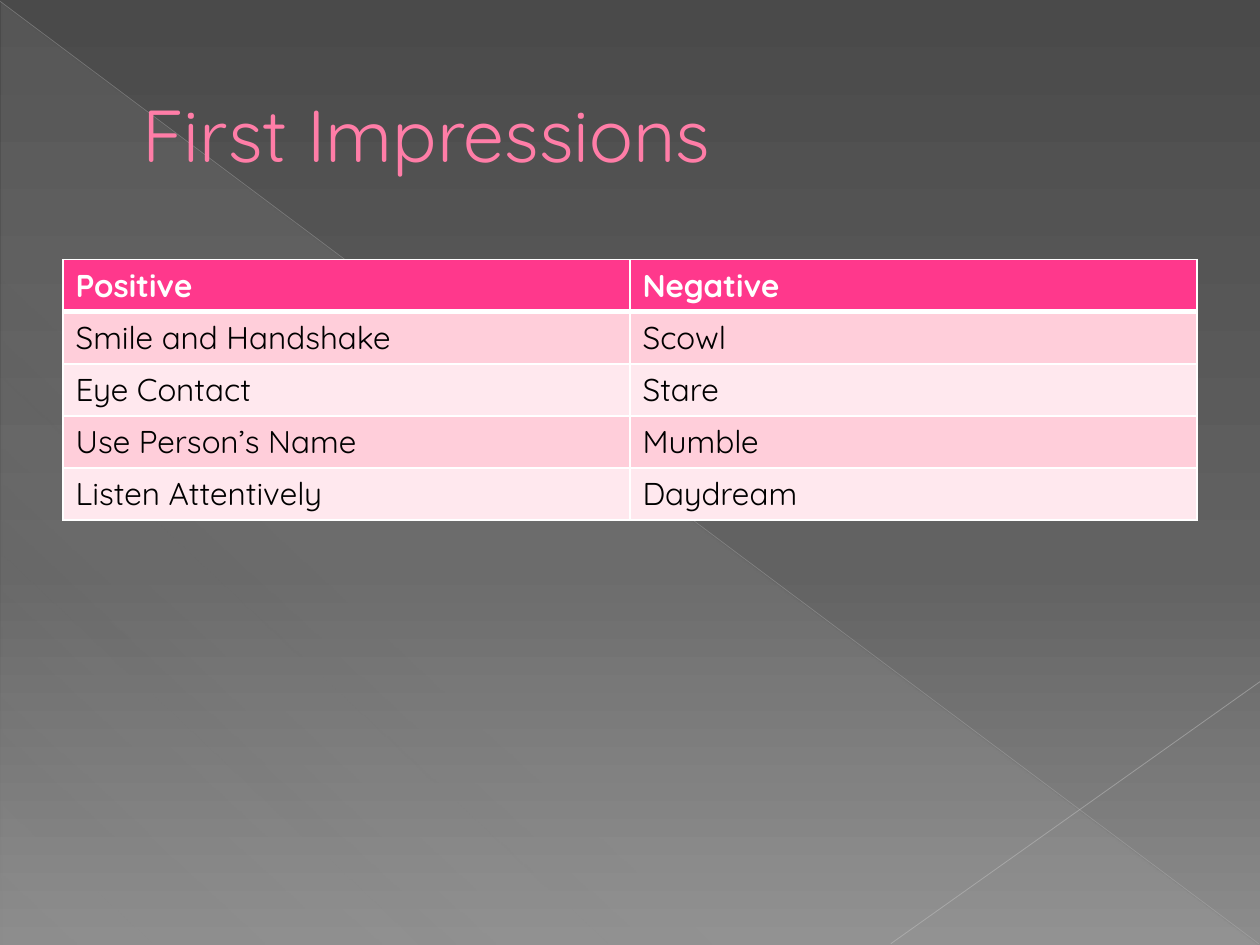
from pptx import Presentation
from pptx.dml.color import RGBColor
from pptx.enum.shapes import MSO_CONNECTOR, MSO_SHAPE
from pptx.enum.text import MSO_ANCHOR, PP_ALIGN
from pptx.oxml import parse_xml
from pptx.oxml.ns import nsdecls, qn
from pptx.util import Inches, Pt


def color(hex_code):
    return RGBColor.from_string(hex_code)


def write(text_frame, text, size=18, hex_code="000000", bold=False):
    paragraph = text_frame.paragraphs[0]
    paragraph.alignment = PP_ALIGN.LEFT
    run = paragraph.add_run()
    run.text = text
    run.font.name = "Quicksand"
    run.font.size = Pt(size)
    run.font.bold = bold
    run.font.color.rgb = color(hex_code)
    return run


presentation = Presentation()
presentation.slide_width = Inches(10)
presentation.slide_height = Inches(7.5)
slide = presentation.slides.add_slide(presentation.slide_layouts[5])

triangle = slide.shapes.add_shape(
    MSO_SHAPE.RIGHT_TRIANGLE, Inches(0.01), Inches(0.02), Inches(9.98), Inches(7.48))
triangle.shadow.inherit = False
triangle.line.fill.background()

gradients = [
    (slide.background.fill, 90,
     [(0, "4A4A4A", 100), (60, "626262", 100), (100, "8C8C8C", 100)]),
    (triangle.fill, 133,
     [(0, "D2D2D2", 10), (70, "D2D2D2", 8), (100, "D2D2D2", 1)]),
]
for fill, angle, stops in gradients:
    fill.gradient()
    fill.gradient_angle = 360 - angle
    stop_list = fill._xPr.find(qn("a:gradFill")).find(qn("a:gsLst"))
    for stop in list(stop_list):
        stop_list.remove(stop)
    for position, hex_code, opacity in stops:
        stop_list.append(parse_xml(
            f'<a:gs {nsdecls("a")} pos="{position * 1000}"><a:srgbClr val="{hex_code}">'
            f'<a:alpha val="{opacity * 1000}"/></a:srgbClr></a:gs>'))

diagonals = [
    (0, 0.01, 9.99, 7.49, "BFBFBF", 0.39, 35),
    (10, 5.41, 7.07, 7.49, "C6C6C6", 0.47, 45),
]
for x1, y1, x2, y2, hex_code, width, opacity in diagonals:
    connector = slide.shapes.add_connector(
        MSO_CONNECTOR.STRAIGHT, Inches(x1), Inches(y1), Inches(x2), Inches(y2))
    connector.line.color.rgb = color(hex_code)
    connector.line.width = Pt(width)
    properties = connector._element.spPr
    properties.find(".//" + qn("a:srgbClr")).append(
        parse_xml(f'<a:alpha {nsdecls("a")} val="{opacity * 1000}"/>'))
    properties.append(parse_xml(f'<a:effectLst {nsdecls("a")}/>'))

title = slide.shapes.title
slide.shapes._spTree.append(title._element)
title.left, title.top = Inches(0.5), Inches(0.29)
title.width, title.height = Inches(9), Inches(1.53)
title.text_frame.vertical_anchor = MSO_ANCHOR.MIDDLE
title_run = write(title.text_frame, "First Impressions", size=42, hex_code="FF7DA7")
title_run._r.get_or_add_rPr().insert(0, parse_xml(
    f'<a:ln {nsdecls("a")} w="{Pt(0.5)}"><a:solidFill><a:srgbClr val="B12761"/>'
    '</a:solidFill></a:ln>'))
title_properties = title.text_frame.paragraphs[0]._p.get_or_add_pPr()
title_properties.set("marL", str(Inches(0.53)))
title_properties.set("indent", "0")

rows = [
    ("Positive", "Negative"),
    ("Smile and Handshake", "Scowl"),
    ("Eye Contact", "Stare"),
    ("Use Person’s Name", "Mumble"),
    ("Listen Attentively", "Daydream"),
]
row_fills = ["FF388C", "FFCEDA", "FFE8EE", "FFCEDA", "FFE8EE"]
table = slide.shapes.add_table(
    len(rows), 2, Inches(0.5), Inches(2.06), Inches(9), Inches(2.03)).table
for row_index, (texts, row_fill) in enumerate(zip(rows, row_fills)):
    is_header = row_index == 0
    border_widths = {"L": 1, "R": 1, "T": 3 if row_index == 1 else 1,
                     "B": 3 if is_header else 1}
    for column_index, text in enumerate(texts):
        cell = table.cell(row_index, column_index)
        write(cell.text_frame, text, bold=is_header,
              hex_code="FFFFFF" if is_header else "000000")
        for side, width in border_widths.items():
            cell._tc.get_or_add_tcPr().append(parse_xml(
                f'<a:ln{side} {nsdecls("a")} w="{Pt(width)}"><a:solidFill>'
                f'<a:srgbClr val="FFFFFF"/></a:solidFill></a:ln{side}>'))
        cell.fill.solid()
        cell.fill.fore_color.rgb = color(row_fill)

presentation.save("out.pptx")
